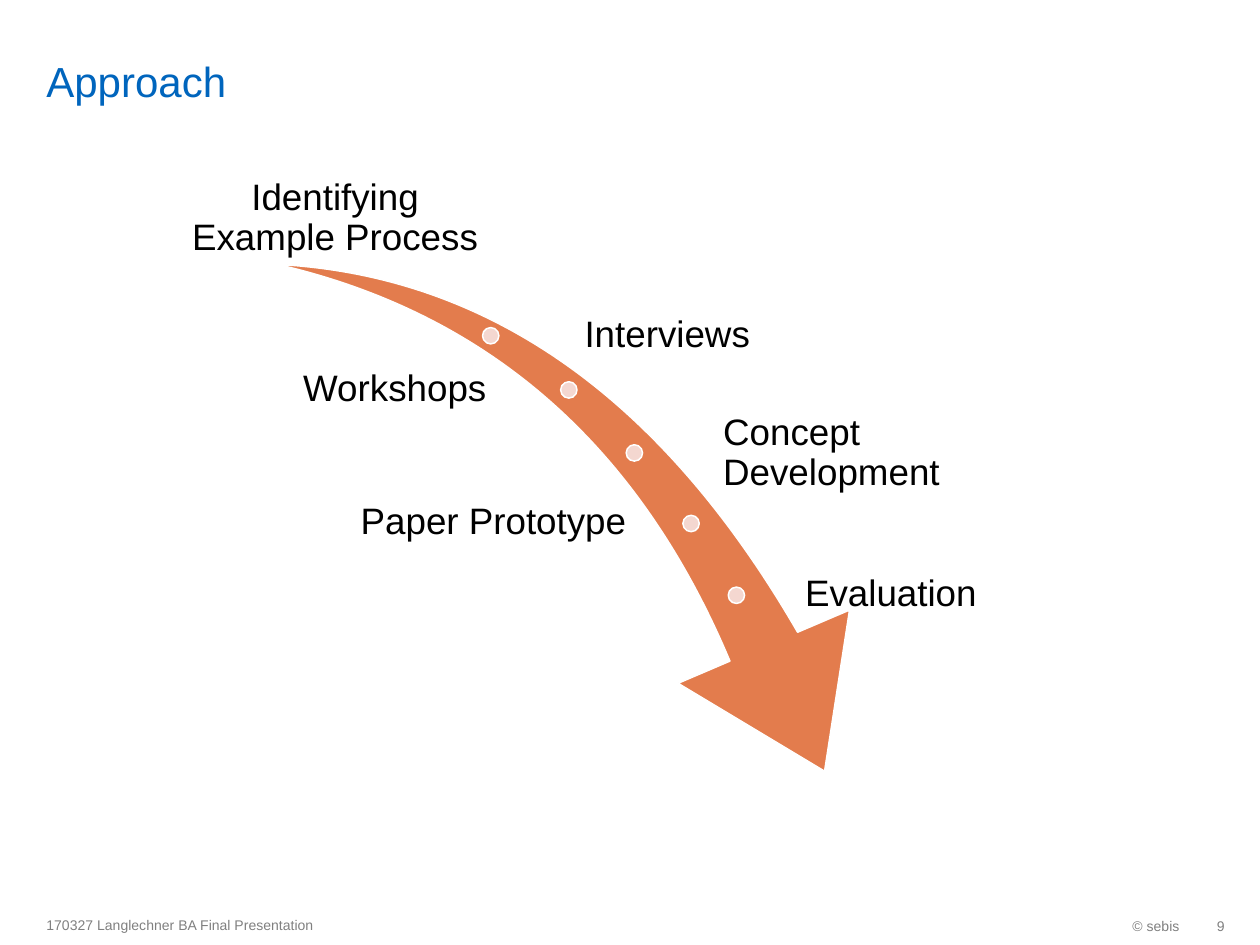
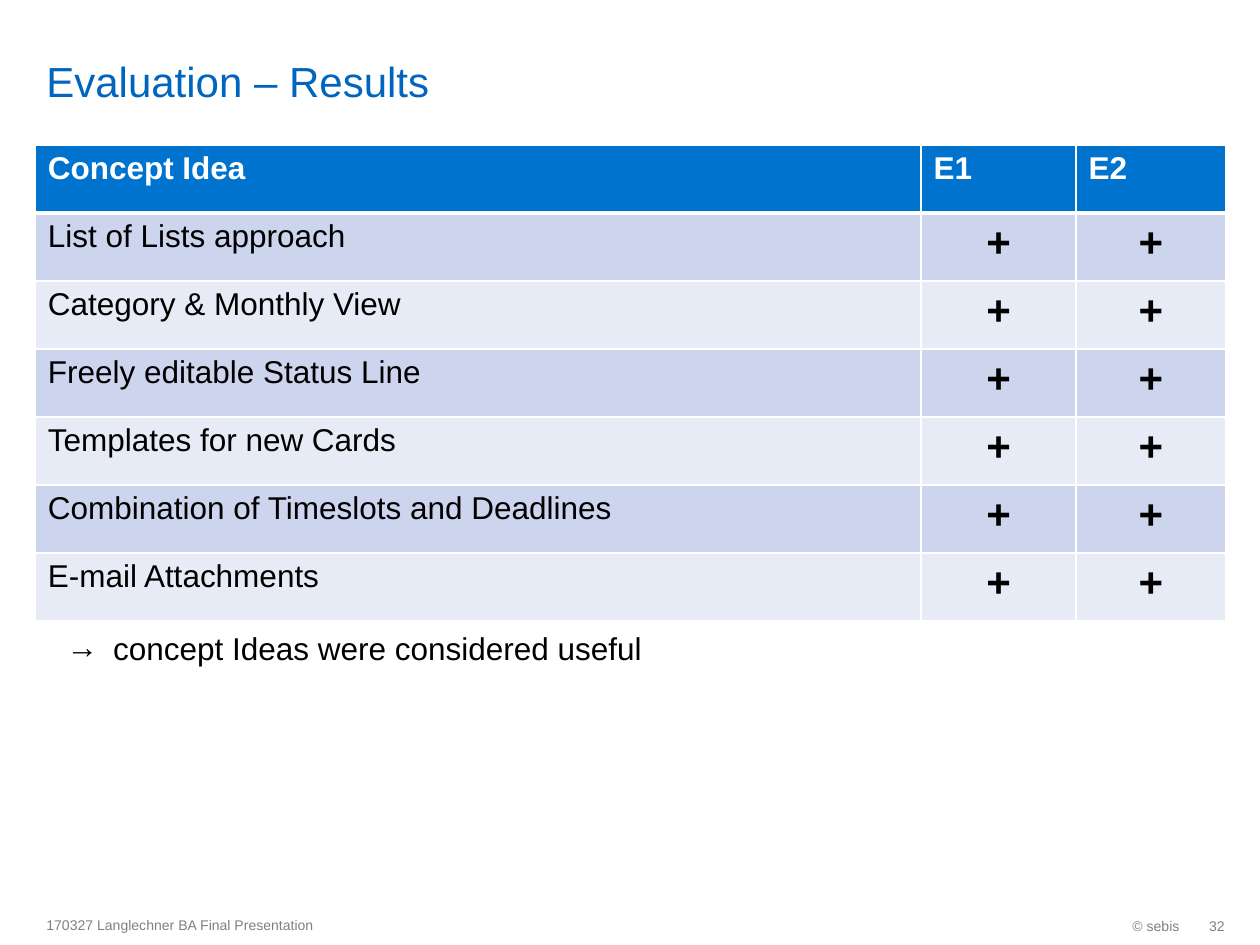
from dataclasses import dataclass

from lxml import etree
from pptx import Presentation
from pptx.dml.color import RGBColor
from pptx.enum.shapes import MSO_SHAPE
from pptx.enum.text import MSO_ANCHOR, PP_ALIGN
from pptx.oxml.ns import qn
from pptx.slide import Slide
from pptx.table import _Cell
from pptx.text.text import TextFrame, _Paragraph
from pptx.util import Inches, Pt

LEFT, CENTER, RIGHT = PP_ALIGN.LEFT, PP_ALIGN.CENTER, PP_ALIGN.RIGHT
TOP, MIDDLE, BOTTOM = MSO_ANCHOR.TOP, MSO_ANCHOR.MIDDLE, MSO_ANCHOR.BOTTOM
SWOOSH, DOT = MSO_SHAPE.SWOOSH_ARROW, MSO_SHAPE.OVAL

WHITE = RGBColor(0xFF, 0xFF, 0xFF)
BLACK = RGBColor(0x00, 0x00, 0x00)
TITLE_BLUE = RGBColor(0x00, 0x65, 0xBD)
FOOTER_GREY = RGBColor(0x80, 0x80, 0x80)
ARROW_ORANGE = RGBColor(0xE3, 0x7C, 0x4D)
DOT_PINK = RGBColor(0xF4, 0xD7, 0xD0)
HEADER_BLUE = RGBColor(0x00, 0x73, 0xCF)
BAND_DARK = RGBColor(0xCC, 0xD5, 0xED)
BAND_LIGHT = RGBColor(0xE7, 0xEB, 0xF6)

FONT = "Arial"
MARGIN_LEFT = 0.27
DOT_SIZE = 0.13
STEP_HEIGHT = 0.94
ROW_HEIGHT = 0.54
COLUMN_WIDTHS = (7.03, 1.23, 1.19)


@dataclass(frozen=True)
class Box:
    left: float
    top: float
    width: float
    height: float

    def lengths(self) -> tuple[Inches, Inches, Inches, Inches]:
        return Inches(self.left), Inches(self.top), Inches(self.width), Inches(self.height)


@dataclass(frozen=True)
class TextStyle:
    size: int
    color: RGBColor
    align: PP_ALIGN = LEFT
    anchor: MSO_ANCHOR = MIDDLE
    insets: tuple[float, float, float, float] = (0.1, 0.05, 0.1, 0.05)
    line_spacing: float = 1.0
    bold: bool = False


@dataclass(frozen=True)
class Step:
    label: str
    left: float
    top: float
    width: float
    align: PP_ALIGN


TITLE_STYLE = TextStyle(24, TITLE_BLUE, anchor=BOTTOM, insets=(0.1, 0, 0.1, 0))
FOOTER_STYLE = TextStyle(8, FOOTER_GREY)
OWNER_STYLE = TextStyle(8, FOOTER_GREY, RIGHT)
NUMBER_STYLE = TextStyle(8, FOOTER_GREY, RIGHT, insets=(0.1, 0.05, 0, 0.05))
HEADER_STYLE = TextStyle(18, WHITE, anchor=TOP, bold=True)
IDEA_STYLE = TextStyle(18, BLACK, anchor=TOP)
RATING_STYLE = TextStyle(24, BLACK, CENTER, TOP, bold=True)

STEPS = (
    Step("Identifying Example Process", 1.46, 1.14, 2.4, CENTER),
    Step("Interviews", 4.61, 2.19, 3.64, LEFT),
    Step("Workshops", 1.75, 2.62, 2.14, RIGHT),
    Step("Concept Development", 5.71, 3.13, 2.53, LEFT),
    Step("Paper Prototype", 1.75, 3.68, 3.25, RIGHT),
    Step("Evaluation", 6.36, 4.25, 1.88, LEFT),
)
MILESTONES = ((3.83, 2.6), (4.45, 3.03), (4.97, 3.53), (5.42, 4.09), (5.78, 4.66))

TABLE_HEADER = ("Concept Idea", "E1", "E2")
CONCEPT_IDEAS = (
    "List of Lists approach",
    "Category & Monthly View",
    "Freely editable Status Line",
    "Templates for new Cards",
    "Combination of Timeslots and Deadlines",
    "E-mail Attachments",
)


def write_text(frame: TextFrame, text: str, style: TextStyle) -> None:
    frame.text = text
    paragraph = frame.paragraphs[0]
    paragraph.alignment = style.align
    paragraph.line_spacing = style.line_spacing
    for run in paragraph.runs:
        run.font.name = FONT
        run.font.size = Pt(style.size)
        run.font.bold = style.bold
        run.font.color.rgb = style.color


def add_text(slide: Slide, box: Box, text: str, style: TextStyle) -> TextFrame:
    frame = slide.shapes.add_textbox(*box.lengths()).text_frame
    frame.word_wrap = True
    frame.vertical_anchor = style.anchor
    left, top, right, bottom = style.insets
    frame.margin_left, frame.margin_top = Inches(left), Inches(top)
    frame.margin_right, frame.margin_bottom = Inches(right), Inches(bottom)
    write_text(frame, text, style)
    return frame


def add_preset(slide: Slide, preset: MSO_SHAPE, box: Box, fill: RGBColor,
               adjustments: tuple[float, ...] = (), rotation: float = 0) -> None:
    shape = slide.shapes.add_shape(preset, *box.lengths())
    shape.shadow.inherit = False
    shape.fill.solid()
    shape.fill.fore_color.rgb = fill
    shape.line.color.rgb = WHITE
    shape.line.width = Pt(0.85)
    shape.rotation = rotation
    for index, value in enumerate(adjustments):
        shape.adjustments[index] = value


def add_base_slide(deck: Presentation, title: str, number: int) -> Slide:
    slide = deck.slides.add_slide(deck.slide_layouts[6])
    add_text(slide, Box(MARGIN_LEFT, 0.05, 8.24, 0.79), title, TITLE_STYLE)
    add_text(slide, Box(MARGIN_LEFT, 7.18, 4.73, 0.32),
             "170327 Langlechner BA Final Presentation", FOOTER_STYLE)
    add_text(slide, Box(7.7, 7.19, 1.76, 0.32), "© sebis", OWNER_STYLE)
    add_text(slide, Box(9.45, 7.19, 0.27, 0.32), str(number), NUMBER_STYLE)
    return slide


def set_borders(cell: _Cell, top: float, bottom: float) -> None:
    properties = cell._tc.get_or_add_tcPr()
    for side, width in (("L", 1), ("R", 1), ("T", top), ("B", bottom)):
        line = etree.SubElement(properties, qn(f"a:ln{side}"), w=str(Pt(width)))
        fill = etree.SubElement(line, qn("a:solidFill"))
        etree.SubElement(fill, qn("a:srgbClr"), val=str(WHITE))


def set_bullet(paragraph: _Paragraph, symbol: str, margin: float, hanging: float) -> None:
    properties = paragraph._p.get_or_add_pPr()
    properties.set("marL", str(Inches(margin)))
    properties.set("indent", str(-Inches(hanging)))
    etree.SubElement(properties, qn("a:buFont"), typeface=FONT)
    etree.SubElement(properties, qn("a:buChar"), char=symbol)


def build_approach(deck: Presentation) -> None:
    slide = add_base_slide(deck, "Approach", 9)
    add_preset(slide, SWOOSH, Box(2.09, 2.25, 5.1, 3.56), ARROW_ORANGE, (0.163, 0.314), 73.3)
    for left, top in MILESTONES:
        add_preset(slide, DOT, Box(left, top, DOT_SIZE, DOT_SIZE), DOT_PINK)
    for index, step in enumerate(STEPS):
        style = TextStyle(21, BLACK, step.align, MIDDLE if index else BOTTOM, (0.03,) * 4, 0.9)
        add_text(slide, Box(step.left, step.top, step.width, STEP_HEIGHT), step.label, style)


def build_results(deck: Presentation) -> None:
    slide = add_base_slide(deck, "Evaluation – Results", 32)
    rows = [TABLE_HEADER] + [(idea, "+", "+") for idea in CONCEPT_IDEAS]
    box = Box(0.28, 1.15, sum(COLUMN_WIDTHS), ROW_HEIGHT * len(rows))
    table = slide.shapes.add_table(len(rows), len(COLUMN_WIDTHS), *box.lengths()).table
    for column, width in zip(table.columns, COLUMN_WIDTHS):
        column.width = Inches(width)
    for row_index, texts in enumerate(rows):
        table.rows[row_index].height = Inches(ROW_HEIGHT)
        for column_index, text in enumerate(texts):
            cell = table.cell(row_index, column_index)
            if row_index == 0:
                style, fill = HEADER_STYLE, HEADER_BLUE
            else:
                style = RATING_STYLE if column_index else IDEA_STYLE
                fill = BAND_DARK if row_index % 2 else BAND_LIGHT
            write_text(cell.text_frame, text, style)
            set_borders(cell, 3 if row_index == 1 else 1, 3 if row_index == 0 else 1)
            cell.fill.solid()
            cell.fill.fore_color.rgb = fill
    conclusion = add_text(slide, Box(MARGIN_LEFT, 4.94, 9.45, 0.4),
                          "concept Ideas were considered useful", IDEA_STYLE)
    set_bullet(conclusion.paragraphs[0], "→", 0.53, 0.37)


def main() -> None:
    deck = Presentation()
    deck.slide_width, deck.slide_height = Inches(10), Inches(7.5)
    build_approach(deck)
    build_results(deck)
    deck.save("out.pptx")


if __name__ == "__main__":
    main()
